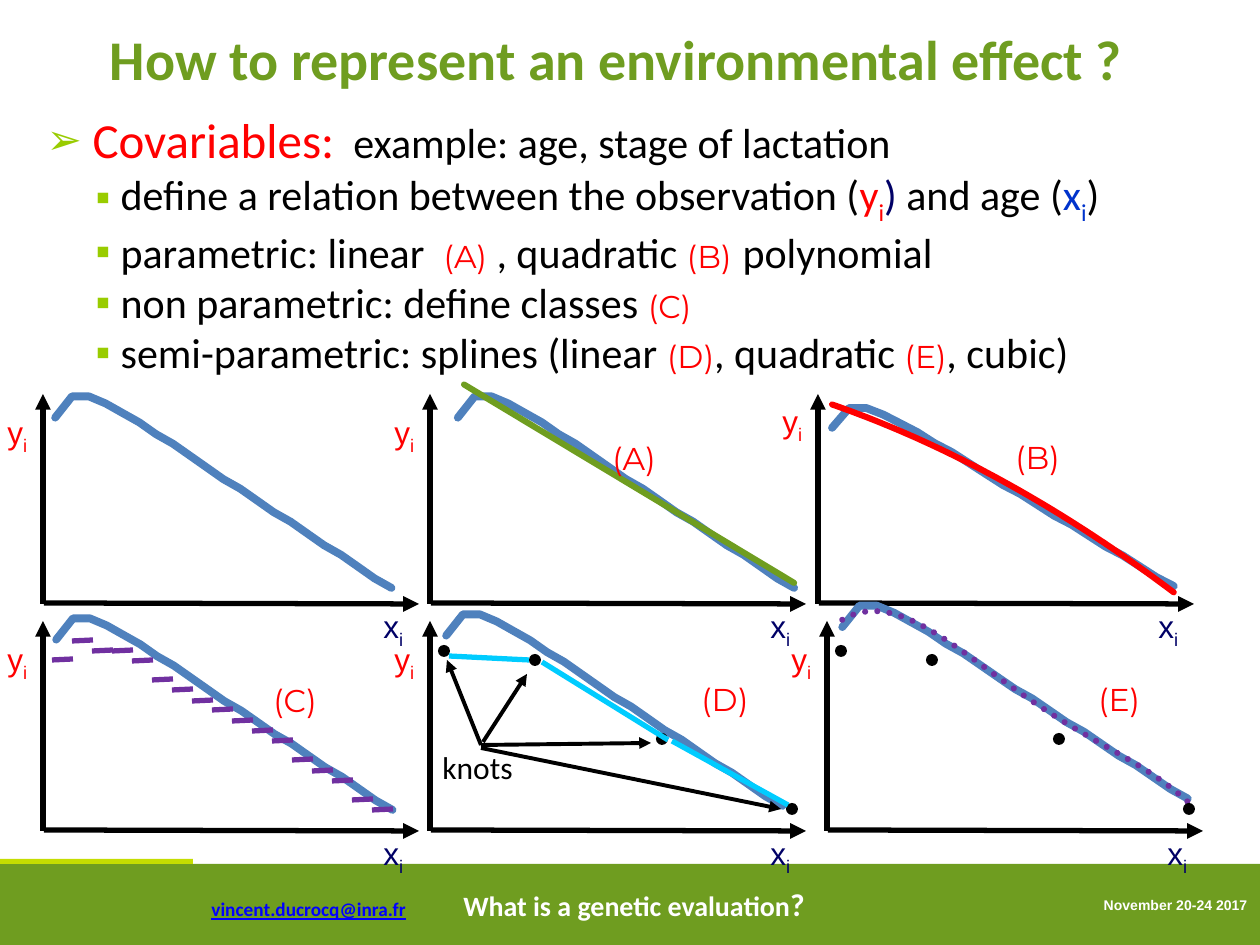
from dataclasses import dataclass
from typing import NamedTuple, Optional

from lxml.etree import SubElement
from pptx import Presentation
from pptx.chart.data import XyChartData
from pptx.dml.color import RGBColor
from pptx.enum.chart import XL_CHART_TYPE
from pptx.enum.shapes import MSO_CONNECTOR, MSO_SHAPE
from pptx.enum.text import MSO_ANCHOR, MSO_AUTO_SIZE, PP_ALIGN
from pptx.oxml import parse_xml
from pptx.oxml.ns import nsdecls, qn
from pptx.util import Emu, Pt

COLORS = {
    "green": "6F9D20", "lime": "C5DD01", "bullet": "99CC00", "white": "FFFFFF",
    "black": "000000", "red": "FF0000", "navy": "000066", "blue": "0033CC",
    "link": "0000FF", "curve": "4F81BD", "purple": "7030A0", "cyan": "00CCFF",
}
YIELDS = [91, 100, 100, 97, 93, 89, 84, 80, 75, 70, 65, 61, 56, 51, 47, 42, 37, 33, 28, 23, 19]
AXIS_HEIGHT, AXIS_WIDTH = 210, 375


class Run(NamedTuple):
    text: str
    color: str = "black"
    size: int = 24
    font: str = "Calibri"
    subscript: bool = False


class Trend(NamedTuple):
    color: str
    order: int
    dash: str = "solid"


class Tag(NamedTuple):
    text: str
    x: int
    y: int


@dataclass
class Panel:
    origin: tuple[int, int]
    chart_box: tuple[int, int, int, int]
    plot_left: float
    trend: Optional[Trend] = None
    tag: Optional[Tag] = None
    y_label_rise: int = 197


def px(length: int) -> Emu:
    return Emu(round(length * 914400 / 126))


def rgb(name: str) -> RGBColor:
    return RGBColor.from_string(COLORS[name])


def write(paragraph, text: str, *, color="black", size=24, font="Calibri",
          subscript=False, bold=False, underline=False) -> None:
    run = paragraph.add_run()
    run.text = text
    run.font.size, run.font.name = Pt(size), font
    run.font.bold, run.font.underline = bold, underline
    run.font.color.rgb = rgb(color)
    if subscript:
        run.font._element.set("baseline", "-25000")


def add_text_box(slide, x: int, y: int, width: int, height: int, wrap=False):
    """Add an empty text box and return its first paragraph."""
    frame = slide.shapes.add_textbox(px(x), px(y), px(width), px(height)).text_frame
    frame.word_wrap = wrap
    return frame.paragraphs[0]


def add_filled(slide, kind, x: int, y: int, width: int, height: int, color: str) -> None:
    shape = slide.shapes.add_shape(kind, px(x), px(y), px(width), px(height))
    shape.shadow.inherit = False
    shape.fill.solid()
    shape.fill.fore_color.rgb = rgb(color)
    shape.line.fill.background()


def add_line(slide, start: tuple[int, int], end: tuple[int, int],
             color="black", width=3.0, arrow=False) -> None:
    line = slide.shapes.add_connector(MSO_CONNECTOR.STRAIGHT, *map(px, start + end))
    line.line.color.rgb = rgb(color)
    line.line.width = Pt(width)
    properties = line._element.spPr
    if arrow:
        SubElement(properties.find(qn("a:ln")), qn("a:tailEnd"), type="triangle")
    SubElement(properties, qn("a:effectLst"))


def add_bullet(paragraph, character: str, left: int, hang: int, percent: int) -> None:
    properties = paragraph._p.get_or_add_pPr()
    properties.set("marL", str(px(left)))
    properties.set("indent", str(-px(hang)))
    color = SubElement(properties, qn("a:buClr"))
    SubElement(color, qn("a:srgbClr"), val=COLORS["bullet"])
    SubElement(properties, qn("a:buSzPct"), val=str(percent * 1000))
    SubElement(properties, qn("a:buChar"), char=character)


def trendline(trend: Trend):
    kind = '<c:trendlineType val="linear"/>' if trend.order == 1 else (
        f'<c:trendlineType val="poly"/><c:order val="{trend.order}"/>')
    return parse_xml(
        f'<c:trendline {nsdecls("c", "a")}><c:spPr><a:ln w="{Pt(3.5)}" cap="rnd"><a:solidFill>'
        f'<a:srgbClr val="{COLORS[trend.color]}"/></a:solidFill><a:prstDash val="{trend.dash}"/>'
        f'</a:ln></c:spPr>{kind}<c:dispRSqr val="0"/><c:dispEq val="0"/></c:trendline>')


def add_curve(slide, panel: Panel) -> None:
    data = XyChartData()
    points = data.add_series("Series 1")
    for x, y in enumerate(YIELDS, start=1):
        points.add_data_point(x, y)
    chart = slide.shapes.add_chart(
        XL_CHART_TYPE.XY_SCATTER_SMOOTH_NO_MARKERS, *map(px, panel.chart_box), data).chart
    chart.has_legend = chart.has_title = False
    chart.font.size, chart.font.name = Pt(10), "Cambria"
    chart.font.color.rgb = rgb("black")
    for axis, maximum in ((chart.category_axis, 25), (chart.value_axis, 105)):
        axis.minimum_scale, axis.maximum_scale = 0, maximum
        axis.has_major_gridlines = False
        axis.visible = False
    plot = chart.plots[0]
    plot.vary_by_categories = False
    line = plot.series[0].format.line
    line.color.rgb = rgb("curve")
    line.width = Pt(4.5)

    # Round line ends, trend line and inner plot area
    x_values = next(chart.element.iter(qn("c:xVal")))
    x_values.getparent().find(qn("c:spPr")).find(qn("a:ln")).set("cap", "rnd")
    if panel.trend:
        x_values.addprevious(trendline(panel.trend))
    plot_area = next(chart.element.iter(qn("c:plotArea")))
    for layout in plot_area.findall(qn("c:layout")):
        plot_area.remove(layout)
    sizes = {"x": panel.plot_left, "y": 0.08, "w": 0.96, "h": 0.92}
    plot_area.insert(0, parse_xml(
        f'<c:layout {nsdecls("c")}><c:manualLayout><c:layoutTarget val="inner"/>'
        '<c:xMode val="edge"/><c:yMode val="edge"/>'
        + "".join(f'<c:{key} val="{value}"/>' for key, value in sizes.items())
        + "</c:manualLayout></c:layout>"))


def add_panel(slide, panel: Panel) -> None:
    add_curve(slide, panel)
    x, y = panel.origin
    add_line(slide, (x, y), (x, y - AXIS_HEIGHT), arrow=True)
    add_line(slide, (x + 1, y - 1), (x + AXIS_WIDTH + 1, y), arrow=True)
    for letter, color, left, top in (("y", "red", x - 48, y - panel.y_label_rise),
                                     ("x", "navy", x + 328, y - 3)):
        label = add_text_box(slide, left, top, 45, 50)
        write(label, letter, color=color, size=18, font="Arial")
        write(label, "i", color=color, size=18, font="Arial", subscript=True)
    if panel.tag:
        write(add_text_box(slide, panel.tag.x, panel.tag.y, 74, 50), panel.tag.text,
              color="red", size=18, font="Montserrat")


def reference(letter: str) -> Run:
    return Run(f"({letter})", "red", 18, "Montserrat")


BULLETS = [
    [Run("Covariables:", "red", 28), Run("  example: age, stage of lactation")],
    [Run("define a relation between the observation ("), Run("y", "red"),
     Run("i", "red", subscript=True), Run(") ", "navy"), Run("and age ("), Run("x", "blue"),
     Run("i", "blue", subscript=True), Run(")")],
    [Run("parametric: linear  "), reference("A"), Run(" , quadratic "), reference("B"),
     Run(" ", "red", font="Montserrat"), Run("polynomial")],
    [Run("non parametric: define classes "), reference("C")],
    [Run("semi-parametric: splines (linear "), reference("D"), Run(", quadratic "),
     reference("E"), Run(", cubic)")],
]
PANELS = [
    Panel((43, 604), (34, 363, 438, 270), 0.01),
    Panel((430, 604), (441, 363, 438, 270), 0, Trend("green", 1), Tag("(A)", 600, 433)),
    Panel((818, 604), (815, 377, 445, 251), 0, Trend("red", 2), Tag("(B)", 1003, 432), 208),
    Panel((43, 831), (35, 585, 438, 270), 0.01, tag=Tag("(C)", 261, 675)),
    Panel((430, 831), (425, 581, 438, 270), 0.01, tag=Tag("(D)", 689, 674)),
    Panel((827, 831), (825, 572, 450, 272), 0, Trend("purple", 4, "sysDot"), Tag("(E)", 1086, 674)),
]
CLASS_HEIGHTS = [660, 641, 651, 651, 661, 680, 690, 701, 710, 721, 731, 741, 760, 771, 781, 800, 810]
KNOTS = [(444, 651), (535, 660), (662, 739), (792, 809)]
KNOT_ARROWS = [((481, 745), (447, 660)), ((483, 742), (527, 674)),
               ((481, 745), (651, 743)), ((481, 748), (781, 809))]
LINEAR_SPLINE = [((449, 656), (529, 660)), ((542, 662), (668, 740)), ((672, 741), (788, 805))]


def main() -> None:
    presentation = Presentation()
    presentation.slide_width, presentation.slide_height = px(1260), px(945)
    slide = presentation.slides.add_slide(presentation.slide_layouts[1])

    # Footer band
    add_filled(slide, MSO_SHAPE.RECTANGLE, 0, 864, 1260, 81, "green")
    add_filled(slide, MSO_SHAPE.RECTANGLE, 0, 859, 193, 5, "lime")
    footer = add_text_box(slide, 199, 879, 937, 50, wrap=True)
    tabs = SubElement(footer._p.get_or_add_pPr(), qn("a:tabLst"))
    SubElement(tabs, qn("a:tab"), pos=str(px(252)), algn="l")
    write(footer, "vincent.ducrocq@inra.fr", color="link", size=11, bold=True, underline=True)
    write(footer, "\tWhat is a genetic evaluation", color="white", size=16, bold=True)
    write(footer, "?", color="white", size=18, bold=True)
    date = add_text_box(slide, 998, 890, 262, 29, wrap=True)
    date.alignment = PP_ALIGN.RIGHT
    write(date, "November 20-24 2017", color="white", size=8, font="Arial", bold=True)

    # Title and list
    title, body = slide.shapes.title, slide.placeholders[1]
    for holder, box in ((title, (99, 18, 1096, 110)), (body, (34, 86, 1226, 396))):
        holder.left, holder.top, holder.width, holder.height = map(px, box)
        holder.text_frame.auto_size = MSO_AUTO_SIZE.NONE
        holder.text_frame.vertical_anchor = MSO_ANCHOR.TOP
    title.fill.solid()
    title.fill.fore_color.rgb = rgb("white")
    title.text_frame.margin_left, title.text_frame.margin_right = 0, px(61)
    heading = title.text_frame.paragraphs[0]
    heading.alignment = PP_ALIGN.CENTER
    write(heading, "How to represent an environmental effect ?", color="green", size=32, bold=True)
    for index, runs in enumerate(BULLETS):
        paragraph = body.text_frame.add_paragraph() if index else body.text_frame.paragraphs[0]
        paragraph.level = 1 if index else 0
        paragraph.space_before = Pt(0)
        paragraph.line_spacing = 1.0 if index else 1.3
        add_bullet(paragraph, *(("▪", 74, 25, 100) if index else ("➢", 46, 46, 86)))
        for run in runs:
            write(paragraph, **run._asdict())

    # Lactation curves
    for panel in PANELS:
        add_panel(slide, panel)

    # Class means of panel C
    for index, height in enumerate(CLASS_HEIGHTS):
        left = 52 + 20 * index
        add_line(slide, (left, height), (left + 21, height - 1), "purple")

    # Knots of panels D and E, with the linear spline of D
    for shift in (0, 397):
        for x, y in KNOTS:
            add_filled(slide, MSO_SHAPE.OVAL, x + shift - 6, y - 6, 12, 12, "black")
    for start, end in KNOT_ARROWS:
        add_line(slide, start, end, width=2.25, arrow=True)
    write(add_text_box(slide, 430, 742, 96, 50), "knots", size=18)
    for start, end in LINEAR_SPLINE:
        add_line(slide, start, end, "cyan")

    presentation.save("out.pptx")


if __name__ == "__main__":
    main()
